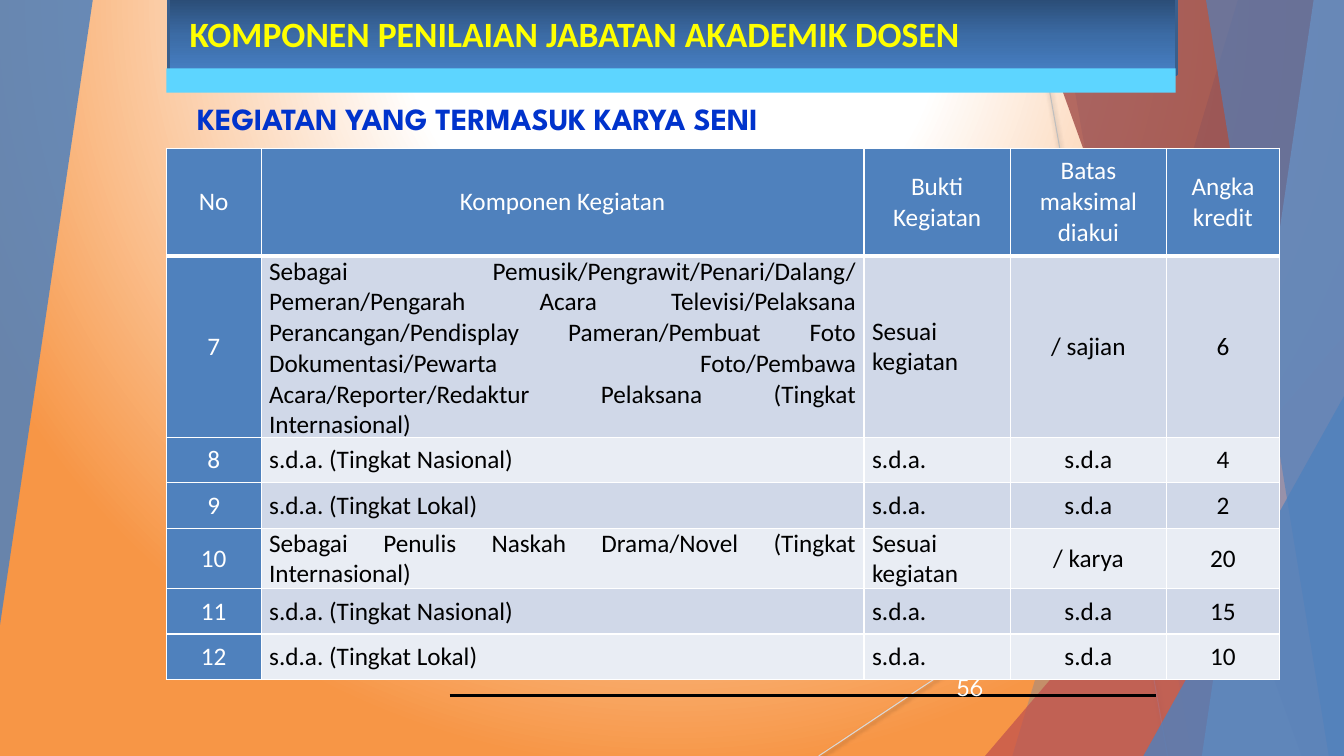
from lxml import etree
from pptx import Presentation
from pptx.dml.color import RGBColor
from pptx.enum.shapes import MSO_CONNECTOR, MSO_SHAPE
from pptx.enum.text import MSO_ANCHOR, MSO_AUTO_SIZE, PP_ALIGN
from pptx.oxml import parse_xml
from pptx.oxml.ns import nsdecls, qn
from pptx.util import Inches, Pt

RECT, TRIANGLE = MSO_SHAPE.RECTANGLE, MSO_SHAPE.RIGHT_TRIANGLE
TRIANGLE = MSO_SHAPE.ISOSCELES_TRIANGLE
LINE = MSO_CONNECTOR.STRAIGHT
TOP, MIDDLE = MSO_ANCHOR.TOP, MSO_ANCHOR.MIDDLE
LEFT, CENTER, JUSTIFY = PP_ALIGN.LEFT, PP_ALIGN.CENTER, PP_ALIGN.JUSTIFY
GROW = MSO_AUTO_SIZE.SHAPE_TO_FIT_TEXT

WHITE = RGBColor(0xFF, 0xFF, 0xFF)
BLACK = RGBColor(0, 0, 0)
BLUE = RGBColor(0x4F, 0x81, 0xBD)
SKY = RGBColor(0x95, 0xB3, 0xD7)
RED = RGBColor(0xC0, 0x50, 0x4D)
MAROON = RGBColor(0x95, 0x37, 0x35)
ORANGE = RGBColor(0xF7, 0x96, 0x46)
CYAN = RGBColor(0x5D, 0xD5, 0xFF)
YELLOW = RGBColor(0xFF, 0xFF, 0)
ROYAL = RGBColor(0, 0x33, 0xCC)
PALE = RGBColor(0xFE, 0xFF, 0xFF)
EDGE = RGBColor(0x3A, 0x5F, 0x8C)
GREY = RGBColor(0xBF, 0xBF, 0xBF)
SILVER = RGBColor(0xD9, 0xD9, 0xD9)
BANDS = RGBColor(0xD0, 0xD8, 0xE8), RGBColor(0xE9, 0xED, 0xF4)
NAVY = [(0, RGBColor(0x2A, 0x4C, 0x75)), (50, RGBColor(0x3C, 0x6C, 0xA6)),
        (100, RGBColor(0x47, 0x80, 0xC5))]
GLOW = [(0, WHITE), (35, WHITE), (100, ORANGE)]

WIDE, HIGH = 13.33, 7.5
TITLE = "KOMPONEN PENILAIAN JABATAN AKADEMIK DOSEN"
SUBTITLE = "KEGIATAN YANG TERMASUK KARYA SENI"
PAGE = "56"
ROWS = [
    ("No", "Komponen Kegiatan", "Bukti Kegiatan", "Batas maksimal diakui", "Angka kredit"),
    ("7", "Sebagai Pemusik/Pengrawit/Penari/Dalang/ Pemeran/Pengarah Acara "
          "Televisi/Pelaksana Perancangan/Pendisplay Pameran/Pembuat Foto "
          "Dokumentasi/Pewarta Foto/Pembawa Acara/Reporter/Redaktur Pelaksana "
          "(Tingkat Internasional)", "Sesuai kegiatan", "/ sajian", "6"),
    ("8", "s.d.a. (Tingkat Nasional)", "s.d.a.", "s.d.a", "4"),
    ("9", "s.d.a. (Tingkat Lokal)", "s.d.a.", "s.d.a", "2"),
    ("10", "Sebagai Penulis Naskah Drama/Novel (Tingkat Internasional)",
     "Sesuai kegiatan", "/ karya", "20"),
    ("11", "s.d.a. (Tingkat Nasional)", "s.d.a.", "s.d.a", "15"),
    ("12", "s.d.a. (Tingkat Lokal)", "s.d.a.", "s.d.a", "10"),
]
COLS = [0.94, 5.98, 1.45, 1.55, 1.12]
TALL = [1.07, 1.8, 0.45, 0.45, 0.6, 0.45, 0.45]
ALIGN = [CENTER, JUSTIFY, LEFT, CENTER, CENTER]

# ("band", x at top, x at bottom) or ("wedge", box, turn); then colour, opacity
FACETS = [
    ("band", (12.28, 10.04), 0, BLUE, 30),
    ("band", (10.5, 11.82), 0, BLUE, 20),
    ("wedge", (9.77, 3.33, 3.56, 4.17), 0, RED, 72),
    ("band", (10.21, 12.91), 0, MAROON, 70),
    ("band", (13.03, 11.92), 0, SKY, 70),
    ("band", (11.96, 13.18), 0, BLUE, 65),
    ("wedge", (11.34, 3.93, 1.99, 3.57), 0, BLUE, 80),
    ("wedge", (0, 0, 0.92, 6.2), 180, BLUE, 85),
]


def inches(nums):
    return [Inches(n) for n in nums]


def style(thing, **values):
    for name, value in values.items():
        setattr(thing, name, value)


def gradient(stops, shade):
    marks = "".join(f'<a:gs pos="{pos * 1000}"><a:srgbClr val="{tone}"/></a:gs>'
                    for pos, tone in stops)
    return parse_xml(f'<a:gradFill {nsdecls("a")} rotWithShape="1">'
                     f'<a:gsLst>{marks}</a:gsLst>{shade}</a:gradFill>')


def paint(shape, tone, alpha=100):
    shape.shadow.inherit = False
    shape.line.fill.background()
    shape.fill.solid()
    shape.fill.fore_color.rgb = tone
    if alpha < 100:
        mark = shape._element.spPr.find(qn("a:solidFill"))[0]
        etree.SubElement(mark, qn("a:alpha"), val=str(alpha * 1000))


def add_line(ends, tone, width, shade=False):
    line = shapes.add_connector(LINE, *inches(ends))
    line.line.color.rgb = tone
    line.line.width = Pt(width)
    effect = etree.SubElement(line._element.spPr, qn("a:effectLst"))
    if shade:
        drop = etree.SubElement(effect, qn("a:outerShdw"), blurRad=str(Pt(3.1)),
                                dist=str(Pt(1.6)), dir="5400000", rotWithShape="0")
        ink = etree.SubElement(drop, qn("a:srgbClr"), val=str(BLACK))
        etree.SubElement(ink, qn("a:alpha"), val="38000")


def write(frame, text, tone, size, font="Calibri", bold=False, align=LEFT):
    frame.text = text
    para = frame.paragraphs[0]
    para.alignment = align
    style(para.runs[0].font, size=Pt(size), name=font, bold=bold)
    para.runs[0].font.color.rgb = tone


def add_text(box, *words, **look):
    frame = shapes.add_textbox(*inches(box)).text_frame
    frame.word_wrap = True
    write(frame, *words, **look)
    return frame


def add_border(cell, side, width):
    edge = etree.SubElement(cell._tc.get_or_add_tcPr(), qn("a:ln" + side), w=str(Pt(width)))
    fill = etree.SubElement(edge, qn("a:solidFill"))
    etree.SubElement(fill, qn("a:srgbClr"), val=str(WHITE))


deck = Presentation()
style(deck, slide_width=Inches(WIDE), slide_height=Inches(HIGH))
slide = deck.slides.add_slide(deck.slide_layouts[5])
shapes = slide.shapes

back = parse_xml(f'<p:bg {nsdecls("p", "a")}><p:bgPr><a:effectLst/></p:bgPr></p:bg>')
back[0].insert(0, gradient(GLOW, '<a:path path="circle"><a:fillToRect l="50000" t="-80000" '
                                 'r="50000" b="180000"/></a:path>'))
slide._element.cSld.insert(0, back)

add_line((10.25, 0, 11.58, HIGH), GREY, 0.75, True)
add_line((WIDE, 4.03, 8.12, HIGH), SILVER, 0.75, True)
for kind, place, turn, tone, alpha in FACETS:
    if kind == "band":
        top, foot = place
        pen = shapes.build_freeform(Inches(top), Inches(-0.01))
        pen.add_line_segments([inches(p) for p in ((WIDE, -0.01), (WIDE, HIGH), (foot, HIGH))])
        facet = pen.convert_to_shape()
    else:
        facet = shapes.add_shape(TRIANGLE, *inches(place))
        facet.adjustments[0] = 1
        facet.rotation = turn
    paint(facet, tone, alpha)

banner = shapes.add_shape(RECT, *inches((1.67, -0.02, 10, 0.76)))
banner.shadow.inherit = False
banner._element.spPr.insert(2, gradient(NAVY, '<a:lin ang="5400000" scaled="0"/>'))
banner.line.color.rgb = EDGE
banner.line.width = Pt(2)
paint(shapes.add_shape(RECT, *inches((1.65, 0.68, 10.01, 0.24))), CYAN)
add_line((4.46, 6.9, 11.47, 6.9), BLACK, 1.75)

title = shapes.title
shapes._spTree.append(title._element)
style(title, left=Inches(1.78), top=Inches(-0.03), width=Inches(9.45), height=Inches(0.72))
style(title.text_frame, vertical_anchor=MIDDLE, word_wrap=True)
write(title.text_frame, TITLE, YELLOW, 25.4, bold=True)
label = add_text((1.86, 0.94, 6.39, 0.47), SUBTITLE, ROYAL, 22, "League Spartan", bold=True)
label.auto_size = GROW

grid = shapes.add_table(len(ROWS), len(COLS),
                        *inches((1.65, 1.47, sum(COLS), sum(TALL)))).table
for col, width in zip(grid.columns, COLS):
    col.width = Inches(width)
for r, (row, tall) in enumerate(zip(ROWS, TALL)):
    grid.rows[r].height = Inches(tall)
    for c, text in enumerate(row):
        cell = grid.cell(r, c)
        head = r == 0 or c == 0
        style(cell, vertical_anchor=MIDDLE, margin_left=Inches(0.08),
              margin_right=Inches(0.08), margin_top=0, margin_bottom=0)
        write(cell.text_frame, text, WHITE if head else BLACK, 18,
              align=CENTER if head else ALIGN[c])
        for side in "LRTB":
            add_border(cell, side, 3 if r == 0 and side == "B" else 1)
        cell.fill.solid()
        cell.fill.fore_color.rgb = BLUE if head else BANDS[(r - 1) % 2]

add_text((9.39, 6.61, 0.75, 0.4), PAGE, PALE, 18, "League Spartan")

deck.save("out.pptx")
